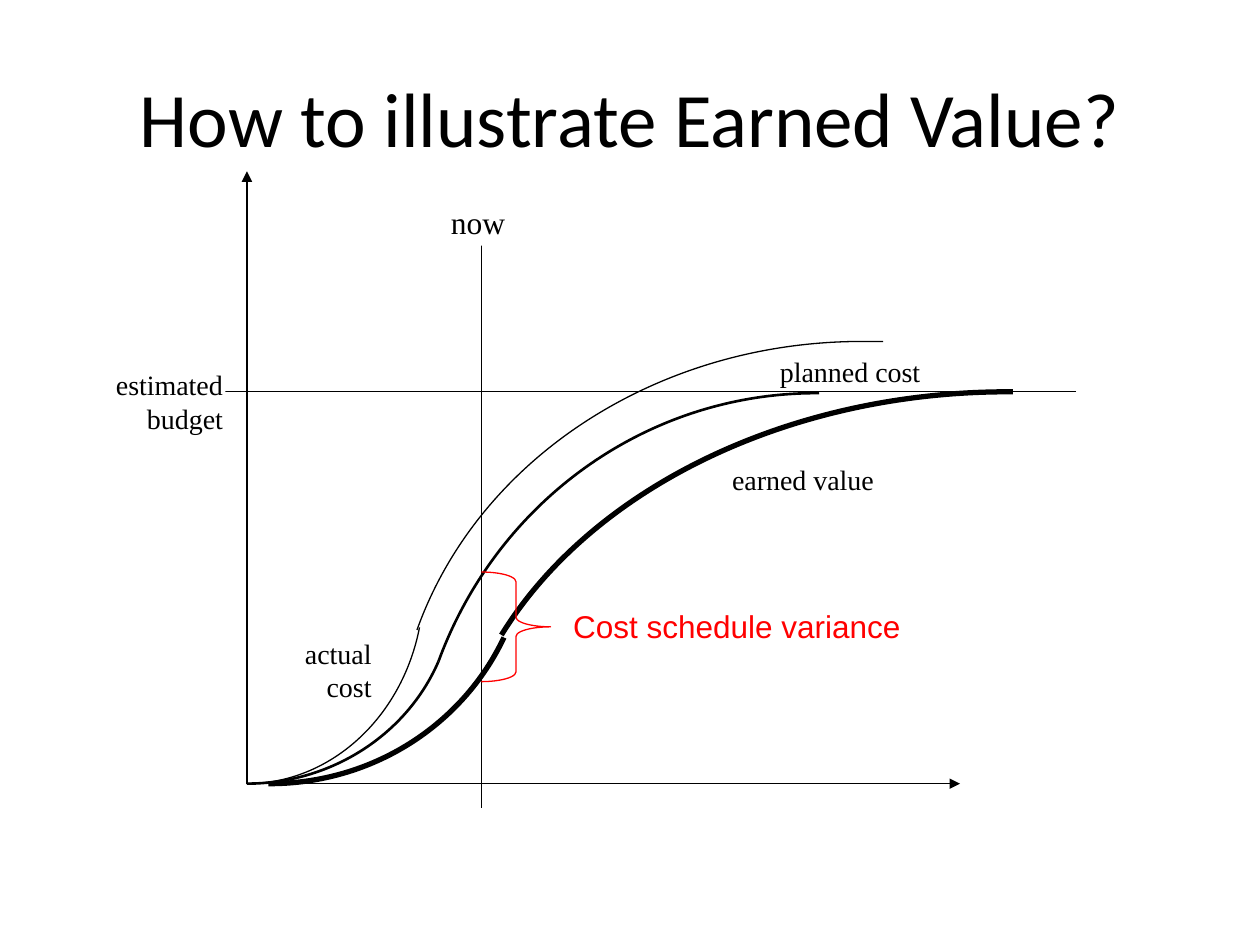
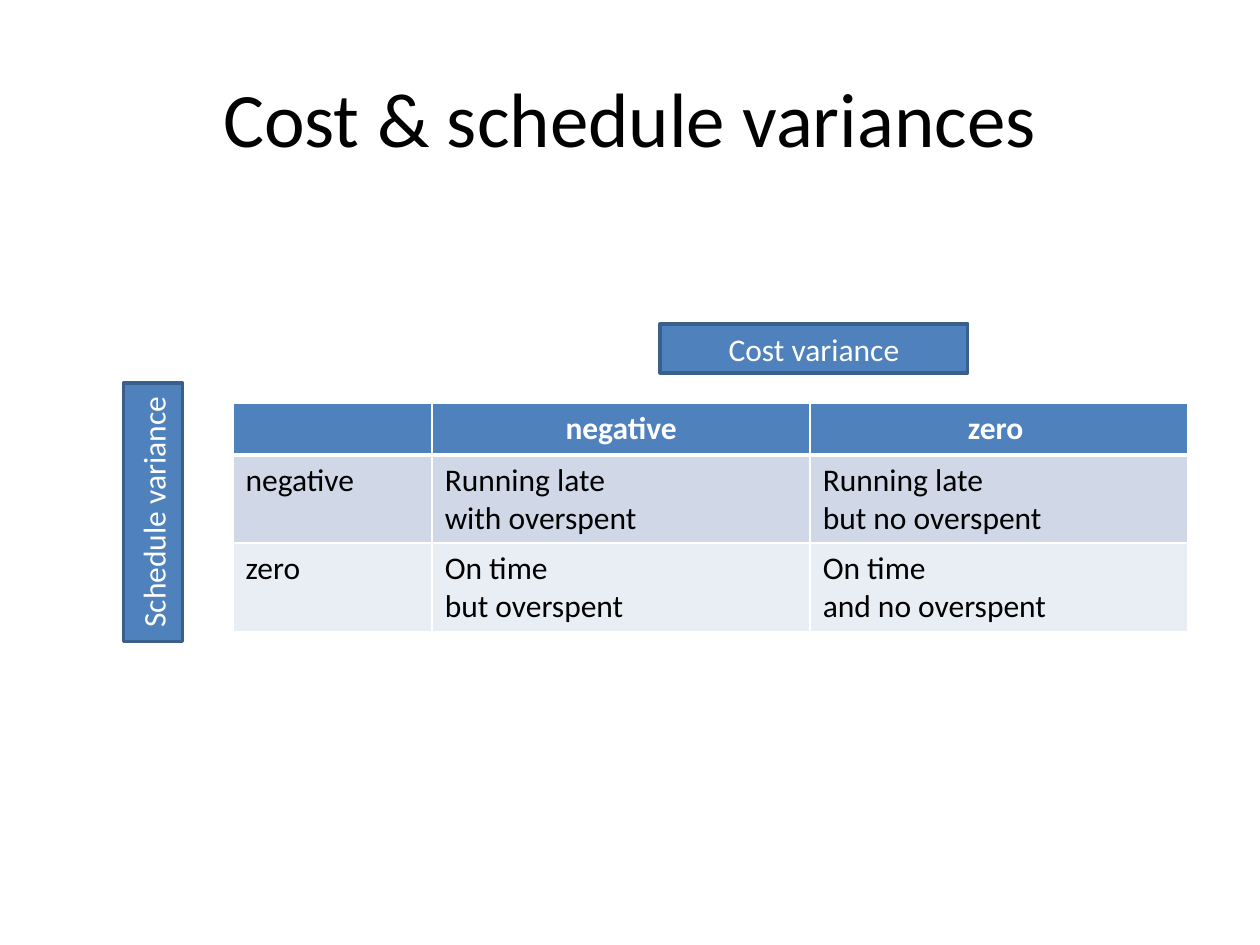
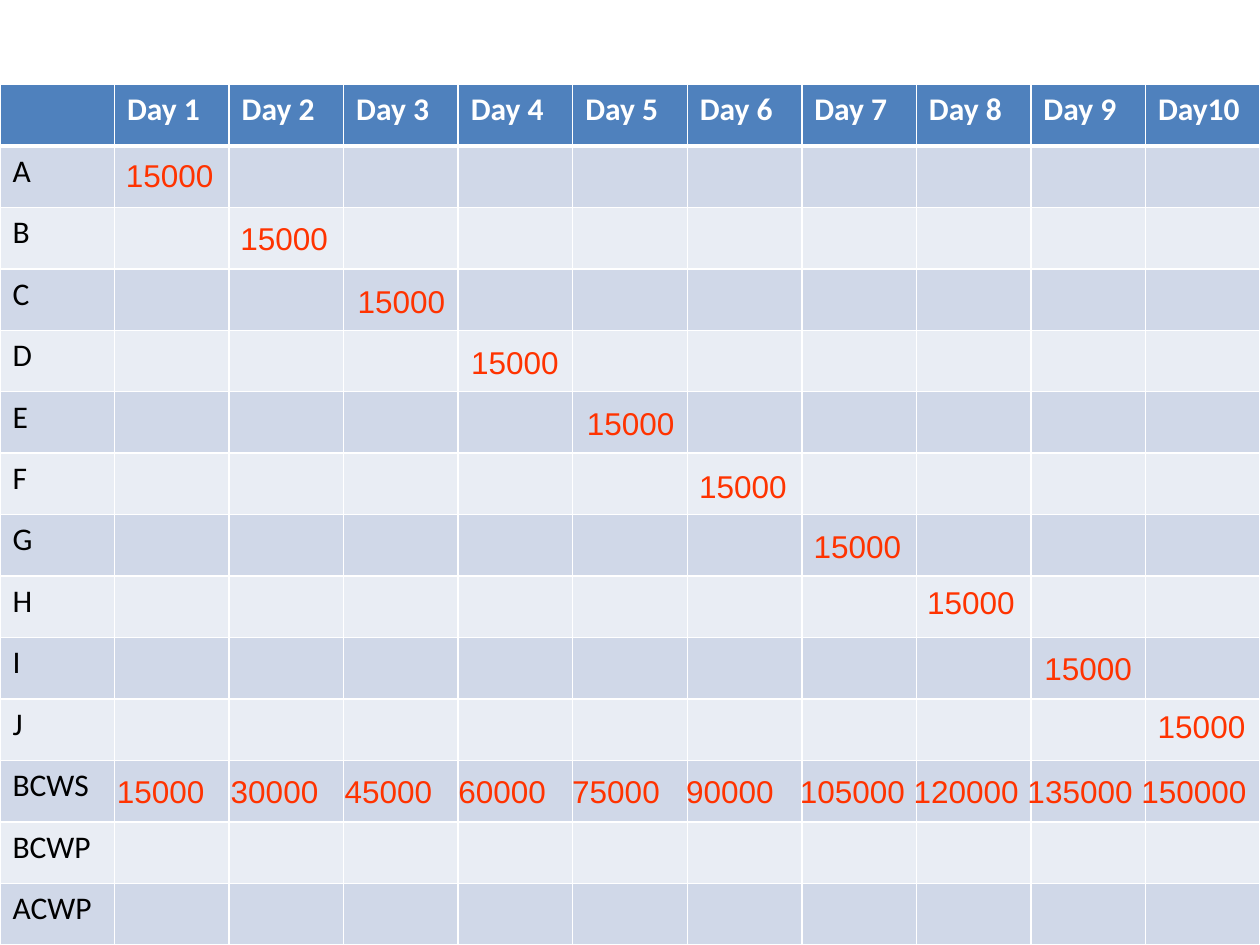
from copy import deepcopy
from dataclasses import dataclass

from lxml.etree import SubElement
from pptx import Presentation
from pptx.dml.color import RGBColor
from pptx.enum.shapes import MSO_CONNECTOR, MSO_SHAPE
from pptx.enum.text import MSO_ANCHOR, MSO_AUTO_SIZE, PP_ALIGN
from pptx.oxml.ns import qn
from pptx.util import Inches, Pt


@dataclass(frozen=True)
class Theme:
    black: RGBColor = RGBColor(0x00, 0x00, 0x00)
    white: RGBColor = RGBColor(0xFF, 0xFF, 0xFF)
    red: RGBColor = RGBColor(0xFF, 0x00, 0x00)
    orange: RGBColor = RGBColor(0xFF, 0x33, 0x00)
    blue: RGBColor = RGBColor(0x4F, 0x81, 0xBD)
    dark_blue: RGBColor = RGBColor(0x3A, 0x5F, 0x8C)
    odd_row: RGBColor = RGBColor(0xD0, 0xD8, 0xE8)
    even_row: RGBColor = RGBColor(0xE9, 0xED, 0xF4)
    body_font: str = "Calibri"
    graph_font: str = "Times New Roman"
    value_font: str = "Arial"
    title_size: int = 44
    body_size: int = 18
    graph_size: int = 16
    border: float = 1
    header_border: float = 3


theme = Theme()


def write_text(frame, text, color=theme.black, font=theme.body_font,
               size=theme.body_size, align=PP_ALIGN.LEFT, bold=False):
    """Fill the first paragraph, with one run per line of text."""
    paragraph = frame.paragraphs[0]
    paragraph.alignment = align
    for number, line in enumerate(text.split("\n")):
        if number:
            paragraph.add_line_break()
        run = paragraph.add_run()
        run.text = line
        run.font.name = font
        run.font.size = Pt(size)
        run.font.bold = bold
        run.font.color.rgb = color


def add_grid(slide, rows, box, widths, row_height, header_align):
    """Add a table with a blue header, two row colours and white borders."""
    graphic_frame = slide.shapes.add_table(
        len(rows), len(widths), *map(Inches, box))
    table = graphic_frame.table
    for column, width in zip(table.columns, widths):
        column.width = Inches(width)
    for row_number, texts in enumerate(rows):
        table.rows[row_number].height = Inches(row_height)
        is_header = row_number == 0
        band = theme.odd_row if row_number % 2 else theme.even_row
        for column_number, text in enumerate(texts):
            cell = table.cell(row_number, column_number)
            for side in "LRTB":
                under_header = (row_number, side) in ((0, "B"), (1, "T"))
                width = theme.header_border if under_header else theme.border
                border = SubElement(cell._tc.get_or_add_tcPr(),
                                    qn(f"a:ln{side}"), w=str(Pt(width)))
                border_fill = SubElement(border, qn("a:solidFill"))
                SubElement(border_fill, qn("a:srgbClr"), val=str(theme.white))
            cell.fill.solid()
            cell.fill.fore_color.rgb = theme.blue if is_header else band
            if text:
                write_text(cell.text_frame, text,
                           theme.white if is_header else theme.black,
                           align=header_align if is_header else PP_ALIGN.LEFT,
                           bold=is_header)
    graphic_frame.height = Inches(box[3])


presentation = Presentation()
presentation.slide_width = Inches(10)
presentation.slide_height = Inches(7.5)
blank_layout = presentation.slide_layouts[6]
graph_slide, variance_slide, schedule_slide = [
    presentation.slides.add_slide(blank_layout) for _ in range(3)]

# Titles
for slide, title in ((graph_slide, "How to illustrate Earned Value?"),
                     (variance_slide, "Cost & schedule variances")):
    title_box = slide.shapes.add_textbox(
        Inches(0.5), Inches(0.3), Inches(9), Inches(1.25))
    title_box.text_frame.word_wrap = True
    title_box.text_frame.vertical_anchor = MSO_ANCHOR.MIDDLE
    write_text(title_box.text_frame, title, size=theme.title_size,
               align=PP_ALIGN.CENTER)

# Earned value graph: straight lines (from, to, has arrowhead)
origin = (1.96, 6.22)
graph_lines = [
    (origin, (1.96, 1.36), True),
    (origin, (7.62, 6.22), True),
    ((3.82, 6.41), (3.82, 1.75), False),
    ((8.54, 3.11), (1.45, 3.11), False),
]
for start, end, has_arrow in graph_lines:
    connector = graph_slide.shapes.add_connector(
        MSO_CONNECTOR.STRAIGHT, *map(Inches, start + end))
    connector.line.color.rgb = theme.black
    connector.line.width = Pt(0.75)
    if has_arrow:
        SubElement(connector.line._get_or_add_ln(), qn("a:tailEnd"),
                   type="triangle")
    SubElement(connector._element.spPr, qn("a:effectLst"))

# Arcs: line width, centre, then points of which the last three end a Bézier
arcs = [
    (3, (2.14, 4.28), [(2.13, 6.22), (2.14, 6.22), (2.95, 6.22), (3.67, 5.76), (4, 5.06)]),
    (3, (8, 6.41), [(8.04, 3.11), (8, 3.11), (6.27, 3.11), (4.7, 3.87), (3.98, 5.04)]),
    (0.75, (1.96, 4.66), [origin, (2.62, 6.22), (3.19, 5.7), (3.33, 4.98)]),
    (0.75, (6.84, 6.02), [(7.01, 2.71), (6.84, 2.71), (5.23, 2.71), (3.8, 3.63), (3.31, 5)]),
    (1.5, (1.96, 4.66), [origin, (2.63, 6.22), (3.23, 5.83), (3.48, 5.25)]),
    (1.5, (6.48, 6.43), [(6.5, 3.12), (6.48, 3.12), (5.14, 3.12), (3.95, 3.97), (3.48, 5.25)]),
]
for width, centre, points in arcs:
    builder = graph_slide.shapes.build_freeform(*map(Inches, points[0]))
    builder.add_line_segments(
        [tuple(map(Inches, point)) for point in points[1:] + [centre]])
    arc = builder.convert_to_shape()
    arc.shadow.inherit = False
    arc.fill.background()
    arc.line.color.rgb = theme.black
    arc.line.width = Pt(width)

    # Bend the outline, then keep the sector to the centre without a line
    sector = next(arc._element.iter(qn("a:path")))
    *_, first, second, third, to_centre = sector.findall(qn("a:lnTo"))
    bezier = SubElement(sector, qn("a:cubicBezTo"))
    to_centre.addprevious(bezier)
    for segment in (first, second, third):
        bezier.append(segment[0])
        sector.remove(segment)
    outline = deepcopy(sector)
    outline.remove(outline.find(qn("a:close")))
    outline.remove(outline.findall(qn("a:lnTo"))[-1])
    outline.set("fill", "none")
    sector.set("stroke", "0")
    sector.addprevious(outline)

# Labels (text, box, size, alignment, side inset, top inset)
graph_labels = [
    ("planned cost", (6.17, 2.81, 1.36, 0.49), theme.graph_size, PP_ALIGN.LEFT, 0.02, 0),
    ("now", (3.48, 1.56, 0.68, 0.39), theme.body_size, PP_ALIGN.LEFT, 0.1, 0.05),
    ("estimated budget", (0.51, 2.92, 1.28, 0.58), theme.graph_size, PP_ALIGN.RIGHT, 0.02, 0),
    ("earned value", (5.79, 3.67, 1.86, 0.58), theme.graph_size, PP_ALIGN.LEFT, 0.02, 0),
    ("actual cost", (2.16, 5.05, 0.81, 0.58), theme.graph_size, PP_ALIGN.RIGHT, 0.02, 0),
]
for text, box, size, align, side_inset, top_inset in graph_labels:
    label = graph_slide.shapes.add_shape(
        MSO_SHAPE.RECTANGLE, *map(Inches, box))
    label.shadow.inherit = False
    label.fill.solid()
    label.fill.fore_color.rgb = theme.white
    label.line.fill.background()
    frame = label.text_frame
    frame.word_wrap = True
    frame.vertical_anchor = MSO_ANCHOR.TOP
    frame.margin_left = frame.margin_right = Inches(side_inset)
    frame.margin_top = frame.margin_bottom = Inches(top_inset)
    write_text(frame, text, font=theme.graph_font, size=size, align=align)
    if text == "planned cost":
        # Behind the lines and curves, just above the title
        graph_slide.shapes[0]._element.addnext(label._element)

brace = graph_slide.shapes.add_shape(
    MSO_SHAPE.RIGHT_BRACE, Inches(3.82), Inches(4.54), Inches(0.55), Inches(0.87))
brace.shadow.inherit = False
brace.adjustments[0] = 0.14
brace.adjustments[1] = 0.5
brace.fill.background()
brace.line.color.rgb = theme.red
brace.line.width = Pt(0.75)
brace_label = graph_slide.shapes.add_textbox(
    Inches(4.45), Inches(4.77), Inches(2.82), Inches(0.4))
brace_label.text_frame.word_wrap = False
brace_label.text_frame.auto_size = MSO_AUTO_SIZE.SHAPE_TO_FIT_TEXT
write_text(brace_label.text_frame, "Cost schedule variance", theme.red,
           theme.value_font)

# Variance table with its two axis names
variance_rows = [
    ["", "negative", "zero "],
    ["negative", "Running late \nwith overspent", "Running late \nbut no overspent"],
    ["zero", "On time\nbut overspent", "On time \nand no overspent"],
]
add_grid(variance_slide, variance_rows, (1.85, 3.2, 7.58, 1.81),
         [1.58, 3, 3], 0.41, PP_ALIGN.CENTER)
for text, box, direction in (
        ("Cost variance", (5.24, 2.57, 2.44, 0.39), "horz"),
        ("Schedule variance", (0.98, 3.04, 0.47, 2.05), "vert270")):
    axis_name = variance_slide.shapes.add_shape(
        MSO_SHAPE.RECTANGLE, *map(Inches, box))
    axis_name.shadow.inherit = False
    axis_name.fill.solid()
    axis_name.fill.fore_color.rgb = theme.blue
    axis_name.line.color.rgb = theme.dark_blue
    axis_name.line.width = Pt(2)
    axis_name.text_frame.vertical_anchor = MSO_ANCHOR.MIDDLE
    axis_name.text_frame._txBody.bodyPr.set("vert", direction)
    write_text(axis_name.text_frame, text, theme.white, align=PP_ALIGN.CENTER)

# Schedule table: one task per day, with the running total in the BCWS row
day_count = 10
daily_cost = 15000
days = [f"Day {day}" for day in range(1, day_count)] + ["Day10"]
row_names = [*"ABCDEFGHIJ", "BCWS", "BCWP", "ACWP"]
schedule_rows = [["", *days]] + [[name] + [""] * day_count for name in row_names]
add_grid(schedule_slide, schedule_rows, (0, 0.67, 10, 6.83),
         [10 / (day_count + 1)] * (day_count + 1), 6.83 / len(schedule_rows),
         PP_ALIGN.LEFT)

totals_box = schedule_slide.shapes.add_textbox(
    Inches(0.83), Inches(6.08), Inches(9.23), Inches(0.4))
totals_box.text_frame.word_wrap = True
totals_box.text_frame.auto_size = MSO_AUTO_SIZE.SHAPE_TO_FIT_TEXT
totals = [str(daily_cost * day) for day in range(1, day_count + 1)]
write_text(totals_box.text_frame, "\t".join(totals), theme.orange, theme.value_font)
paragraph_properties = totals_box.text_frame.paragraphs[0]._p.get_or_add_pPr()
tab_list = SubElement(paragraph_properties, qn("a:tabLst"))
last_tab = 8.13
for day in range(1, day_count):
    SubElement(tab_list, qn("a:tab"),
               pos=str(Inches(last_tab * day / (day_count - 1))), algn="l")

cost_positions = [
    (0.9, 1.19), (1.81, 1.69), (2.74, 2.19), (3.64, 2.67), (4.56, 3.16),
    (5.45, 3.66), (6.36, 4.13), (7.26, 4.58), (8.19, 5.1), (9.09, 5.56),
]
for left, top in cost_positions:
    cost_box = schedule_slide.shapes.add_textbox(
        Inches(left), Inches(top), Inches(0.9), Inches(0.4))
    cost_box.text_frame.word_wrap = False
    cost_box.text_frame.auto_size = MSO_AUTO_SIZE.SHAPE_TO_FIT_TEXT
    write_text(cost_box.text_frame, str(daily_cost), theme.orange, theme.value_font)

presentation.save("out.pptx")
